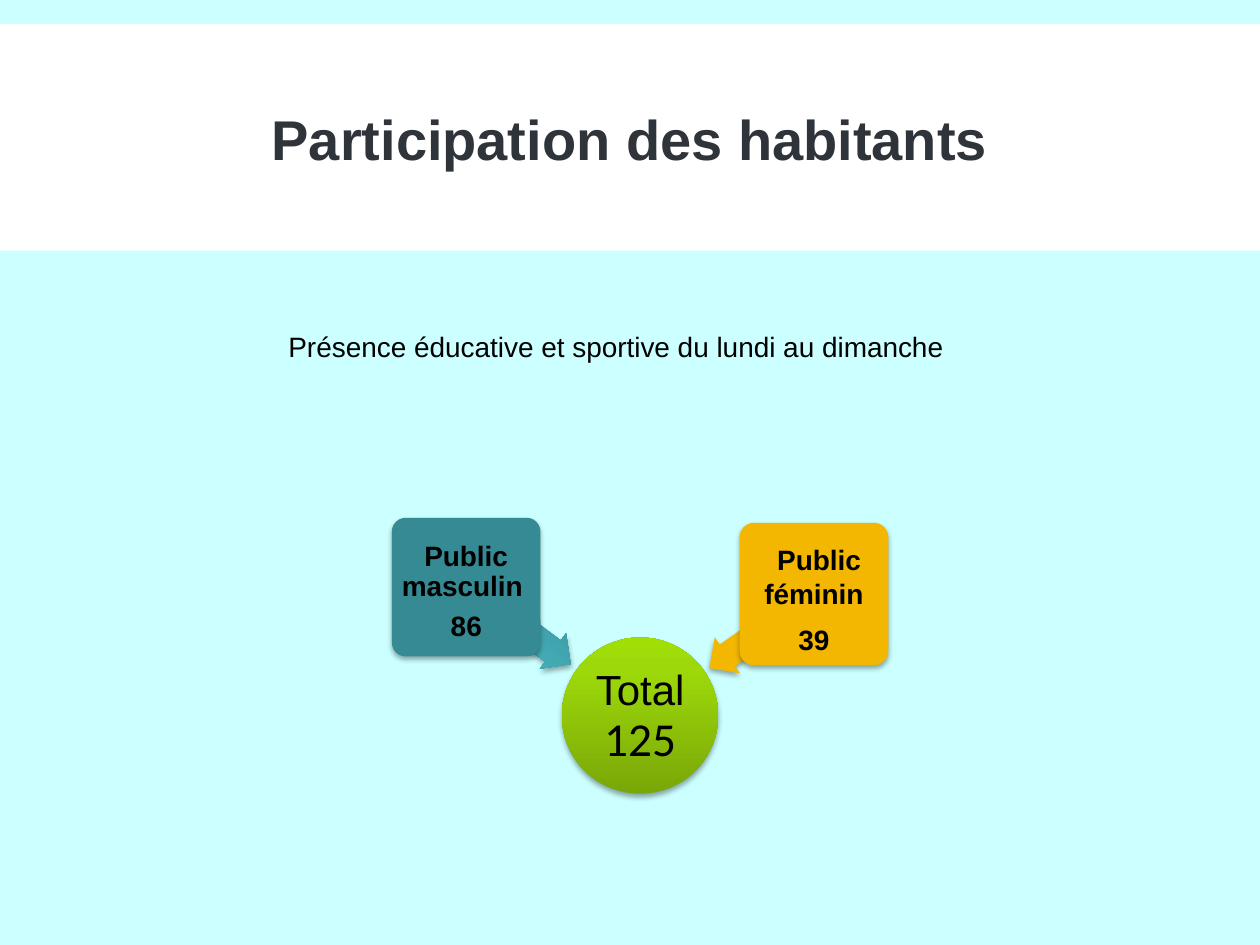
from collections import namedtuple
from dataclasses import dataclass

from lxml import etree
from pptx import Presentation
from pptx.dml.color import RGBColor
from pptx.enum.shapes import MSO_SHAPE
from pptx.enum.text import MSO_ANCHOR, PP_ALIGN
from pptx.oxml.ns import qn
from pptx.util import Inches, Pt

RECTANGLE, ELLIPSE = MSO_SHAPE.RECTANGLE, MSO_SHAPE.OVAL
ROUNDED, ARROW = MSO_SHAPE.ROUNDED_RECTANGLE, MSO_SHAPE.LEFT_ARROW
MIDDLE, TOP, CENTER = MSO_ANCHOR.MIDDLE, MSO_ANCHOR.TOP, PP_ALIGN.CENTER

Box = namedtuple("Box", "left top width height")  # inches


@dataclass(frozen=True)
class Theme:
    background: str = "CCFFFF"
    band: str = "FFFFFF"
    title: str = "2E343A"
    text: str = "000000"
    teal: str = "358A93"
    amber: str = "F3B702"
    teal_gradient: tuple = ((0, "388C95"), (80, "48B6C1"), (100, "46B9C4"))
    green_gradient: tuple = ((0, "79A708"), (80, "9DD90A"), (100, "A0DE06"))
    font: str = "Arial"
    number_font: str = "Calibri"
    title_size: int = 32
    body_size: int = 16
    total_size: int = 24
    number_size: int = 27
    spacer_size: int = 26


THEME = Theme()


def within(box, left, top, width, height):
    """Sub-box given as shares of its parent."""
    return Box(box.left + left * box.width, box.top + top * box.height,
               width * box.width, height * box.height)


def inset(box, margin):
    return Box(box.left + margin, box.top + margin,
               box.width - 2 * margin, box.height - 2 * margin)


def set_values(target, values):
    for name, value in values.items():
        setattr(target, name, value)


def add_element(parent, tag, **attributes):
    return etree.SubElement(parent, qn(f"a:{tag}"), attributes)


def fill_gradient(shape, stops):
    """Gradient that runs from bottom to top."""
    properties = shape.fill._xPr
    gradient = etree.Element(qn("a:gradFill"), rotWithShape="1")
    stop_list = add_element(gradient, "gsLst")
    for position, color in stops:
        stop = add_element(stop_list, "gs", pos=str(position * 1000))
        add_element(stop, "srgbClr", val=color)
    add_element(gradient, "lin", ang="16200000", scaled="0")
    properties.find(qn("a:prstGeom")).addnext(gradient)


def add_soft_shadow(shape):
    effects = shape._element.spPr.find(qn("a:effectLst"))
    shadow = add_element(effects, "outerShdw", blurRad=str(Pt(3.1)), dist=str(Pt(1.8)),
                         dir="5400000", rotWithShape="0")
    color = add_element(shadow, "srgbClr", val=THEME.text)
    add_element(color, "alpha", val="35000")


def add_figure(slide, kind, box, fill, adjustments=(), rotation=0, soft_shadow=True):
    shape = slide.shapes.add_shape(kind, *map(Inches, box))
    shape.rotation = rotation
    for index, value in enumerate(adjustments):
        shape.adjustments[index] = value
    shape.line.fill.background()
    shape.shadow.inherit = False
    if isinstance(fill, str):
        shape.fill.solid()
        shape.fill.fore_color.rgb = RGBColor.from_string(fill)
    else:
        fill_gradient(shape, fill)
    if soft_shadow:
        add_soft_shadow(shape)
    return shape


def run_format(size=THEME.body_size, bold=False, font=THEME.font):
    return {"size": Pt(size), "bold": bold, "name": font}


def add_text(slide, box, paragraphs, color=THEME.text, anchor=MIDDLE,
             margin=None, spacing=0.9, after=0):
    """Each paragraph is a list of (text, font values) runs."""
    frame = slide.shapes.add_textbox(*map(Inches, box)).text_frame
    set_values(frame, {"word_wrap": True, "vertical_anchor": anchor})
    if margin is not None:
        sides = ("left", "top", "right", "bottom")
        set_values(frame, {f"margin_{side}": Inches(margin) for side in sides})
    for index, runs in enumerate(paragraphs):
        paragraph = frame.add_paragraph() if index else frame.paragraphs[0]
        set_values(paragraph, {"alignment": CENTER, "line_spacing": spacing,
                               "space_after": Pt(after)})
        for text, values in runs:
            run = paragraph.add_run()
            run.text = text
            set_values(run.font, values)
            run.font.color.rgb = RGBColor.from_string(color)


def add_header(slide, box):
    add_figure(slide, RECTANGLE, box, THEME.band, soft_shadow=False)
    title = [("Participation des habitants", run_format(THEME.title_size, True))]
    add_text(slide, within(box, 0.075, 0.07, 0.85, 0.91), [title],
             color=THEME.title, spacing=0.85)


def add_subtitle(slide, box):
    text = "Présence éducative et sportive du lundi au dimanche "
    add_text(slide, box, [[(text, run_format())]], anchor=TOP, spacing=1)


def add_total(slide, box):
    add_figure(slide, ELLIPSE, box, THEME.green_gradient)
    runs = [("Total", run_format(THEME.total_size)),
            (" 125", run_format(THEME.number_size, font=THEME.number_font))]
    add_text(slide, inset(box, 0.18), [runs], margin=0.02)


def add_audience(slide, box, arrow_box, rotation, fill, arrow_fill, paragraphs,
                 margin, after, drop=0):
    """Card with its arrow towards the total."""
    add_figure(slide, ARROW, arrow_box, arrow_fill, (0.6, 0.5), rotation)
    add_figure(slide, ROUNDED, box, fill, (0.1,))
    text_box = inset(box, 0.03)
    add_text(slide, text_box._replace(top=text_box.top + drop), paragraphs,
             margin=margin, after=after)


def add_participation(slide, box):
    left, top = box.left, box.top
    bold = run_format(bold=True)
    add_total(slide, Box(left + 1.35, top + 0.95, 1.24, 1.24))
    # Male audience
    add_audience(slide, Box(left, top, 1.18, 1.1),
                 Box(left + 0.49, top + 0.68, 1.03, 0.35), 216.4,
                 THEME.teal, THEME.teal_gradient,
                 [[("Public masculin ", bold)], [("86", bold)]],
                 margin=0.03, after=5.6, drop=0.04)
    # Female audience
    spacer = (" ", run_format(THEME.spacer_size, font=THEME.number_font))
    add_audience(slide, Box(left + box.width - 1.18, top + 0.04, 1.18, 1.13),
                 Box(left + 2.43, top + 0.73, 1, 0.35), 325,
                 THEME.amber, THEME.amber,
                 [[spacer, ("Public féminin", bold)], [("39", bold)]],
                 margin=0.05, after=9.1)


def main():
    presentation = Presentation()
    set_values(presentation, {"slide_width": Inches(10), "slide_height": Inches(7.5)})
    slide = presentation.slides.add_slide(presentation.slide_layouts[6])
    slide.background.fill.solid()
    slide.background.fill.fore_color.rgb = RGBColor.from_string(THEME.background)

    add_header(slide, Box(0, 0.19, 10, 1.8))
    add_participation(slide, Box(3.11, 4.11, 3.94, 2.19))
    add_subtitle(slide, Box(1.22, 2.57, 7.4, 0.37))
    presentation.save("out.pptx")


if __name__ == "__main__":
    main()
